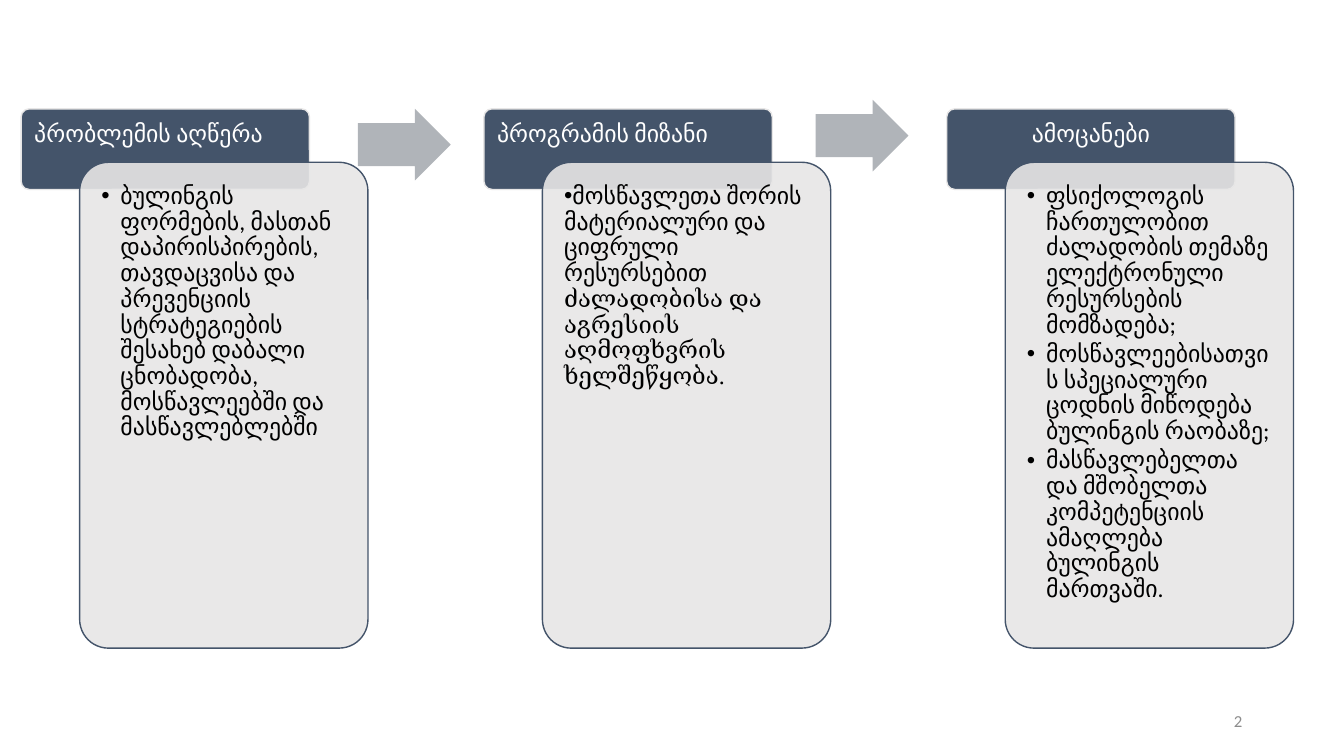
from lxml import etree
from pptx import Presentation
from pptx.dml.color import RGBColor
from pptx.enum import shapes, text
from pptx.oxml import ns
from pptx.util import Inches, Pt

# Content: heading, heading alignment, hanging indent, paragraphs of (words, font)
LEFT, CENTER, RIGHT = text.PP_ALIGN.LEFT, text.PP_ALIGN.CENTER, text.PP_ALIGN.RIGHT
SANS, SERIF = "Calibri", "Times New Roman"
STAGES = [
    ("პრობლემის აღწერა", LEFT, 0.19, [
        [("ბულინგის ფორმების, მასთან დაპირისპირების, თავდაცვისა და პრევენციის "
          "სტრატეგიების შესახებ დაბალი ცნობადობა, მოსწავლეებში და "
          "მასწავლებლებში", SANS)],
    ]),
    ("პროგრამის მიზანი", LEFT, 0, [
        [("მოსწავლეთა შორის მატერიალური და ციფრული რესურსებით ", SANS),
         ("ძალადობისა და აგრესიის აღმოფხვრის ხელშეწყობა.", SERIF)],
    ]),
    ("ამოცანები", CENTER, 0.19, [
        [("ფსიქოლოგის ჩართულობით ძალადობის თემაზე ელექტრონული რესურსების "
          "მომზადება;", SANS)],
        [("მოსწავლეებისათვის სპეციალური ცოდნის მიწოდება ბულინგის რაობაზე;", SANS)],
        [("მასწავლებელთა და მშობელთა კომპეტენციის ამაღლება ბულინგის "
          "მართვაში.", SANS)],
    ]),
]
ARROWS = [(3.55, 1.08), (8.09, 0.99)]
PAGE_NUMBER = "2"

NAVY = RGBColor(0x44, 0x54, 0x6A)
PALE = RGBColor(0xE7, 0xE6, 0xE6)
ARROW_GRAY = RGBColor(0xB0, 0xB4, 0xB9)
PAGE_GRAY = RGBColor(0x8C, 0x8C, 0x8C)
WHITE = RGBColor(0xFF, 0xFF, 0xFF)
BLACK = RGBColor(0, 0, 0)

# Layout in inches
FIRST_LEFT, STAGE_STEP, STAGE_WIDTH = 0.21, 4.59, 2.86
HEADING_TOP, HEADING_HEIGHT, HEADING_TEXT_HEIGHT = 1.08, 0.8, 0.54
CARD_SHIFT, CARD_TOP, CARD_HEIGHT, CARD_PAD = 0.58, 1.61, 4.82, 0.085
INSET = 0.13
BODY_SIZE = 17

prs = Presentation()
prs.slide_width, prs.slide_height = Inches(13.33), Inches(7.5)
slide = prs.slides.add_slide(prs.slide_layouts[6])


def add_block(kind, box, adjustments, fill, line=None):
    block = slide.shapes.add_shape(kind, *map(Inches, box))
    block.shadow.inherit = False
    for i, value in enumerate(adjustments):
        block.adjustments[i] = value
    block.fill.solid()
    block.fill.fore_color.rgb = fill
    if line is None:
        block.line.fill.background()
    else:
        block.line.color.rgb = line
        block.line.width = Pt(1)
    return block


def add_words(box, frame_format, paragraphs, para_format, size, color):
    frame = slide.shapes.add_textbox(*map(Inches, box)).text_frame
    for name, value in {"word_wrap": True, **frame_format}.items():
        setattr(frame, name, value)
    for i, runs in enumerate(paragraphs):
        para = frame.add_paragraph() if i else frame.paragraphs[0]
        for name, value in para_format.items():
            setattr(para, name, value)
        for words, font in runs:
            run = para.add_run()
            run.text = words
            run.font.name, run.font.size = font, Pt(size)
            run.font.color.rgb = color
    return frame


def add_bullets(frame, hanging):
    for para in frame.paragraphs:
        props = para._p.get_or_add_pPr()
        props.set("marL", str(Inches(hanging)))
        props.set("indent", str(-Inches(hanging)))
        bullet_color = etree.SubElement(props, ns.qn("a:buClr"))
        etree.SubElement(bullet_color, ns.qn("a:srgbClr"), val=str(BLACK))
        etree.SubElement(props, ns.qn("a:buFont"), typeface="Arial")
        etree.SubElement(props, ns.qn("a:buChar"), char="•")


insets = {f"margin_{side}": Inches(INSET) for side in ("left", "top", "right", "bottom")}
heading_insets = {**insets, "margin_bottom": Inches(0.07)}

# Stages: heading bar with an overlapping translucent card
for i, (heading, align, hanging, points) in enumerate(STAGES):
    left = FIRST_LEFT + i * STAGE_STEP
    add_block(shapes.MSO_SHAPE.ROUNDED_RECTANGLE,
              (left, HEADING_TOP, STAGE_WIDTH, HEADING_HEIGHT), [0.1], NAVY, PALE)
    add_words((left, HEADING_TOP, STAGE_WIDTH, HEADING_TEXT_HEIGHT), heading_insets,
              [[(heading, SANS)]],
              {"alignment": align, "line_spacing": 0.9, "space_after": Pt(6)},
              BODY_SIZE, WHITE)

    card_left = left + CARD_SHIFT
    card = add_block(shapes.MSO_SHAPE.ROUNDED_RECTANGLE,
                     (card_left, CARD_TOP, STAGE_WIDTH, CARD_HEIGHT), [0.1], PALE, NAVY)
    card_color = card._element.spPr.find(ns.qn("a:solidFill")).find(ns.qn("a:srgbClr"))
    etree.SubElement(card_color, ns.qn("a:alpha"), val="90000")
    body = add_words((card_left + CARD_PAD, CARD_TOP + CARD_PAD,
                      STAGE_WIDTH - 2 * CARD_PAD, CARD_HEIGHT - 2 * CARD_PAD),
                     insets, points,
                     {"level": 1, "line_spacing": 0.9, "space_after": Pt(2.6)},
                     BODY_SIZE, BLACK)
    add_bullets(body, hanging)

# Arrows between stages
for left, top in ARROWS:
    add_block(shapes.MSO_SHAPE.RIGHT_ARROW, (left, top, 0.92, 0.71), [0.6, 0.5], ARROW_GRAY)

# Page number
add_words((9.42, 6.95, 3, 0.4), {"vertical_anchor": text.MSO_ANCHOR.MIDDLE},
          [[(PAGE_NUMBER, SANS)]], {"alignment": RIGHT}, 12, PAGE_GRAY)

prs.save("out.pptx")
